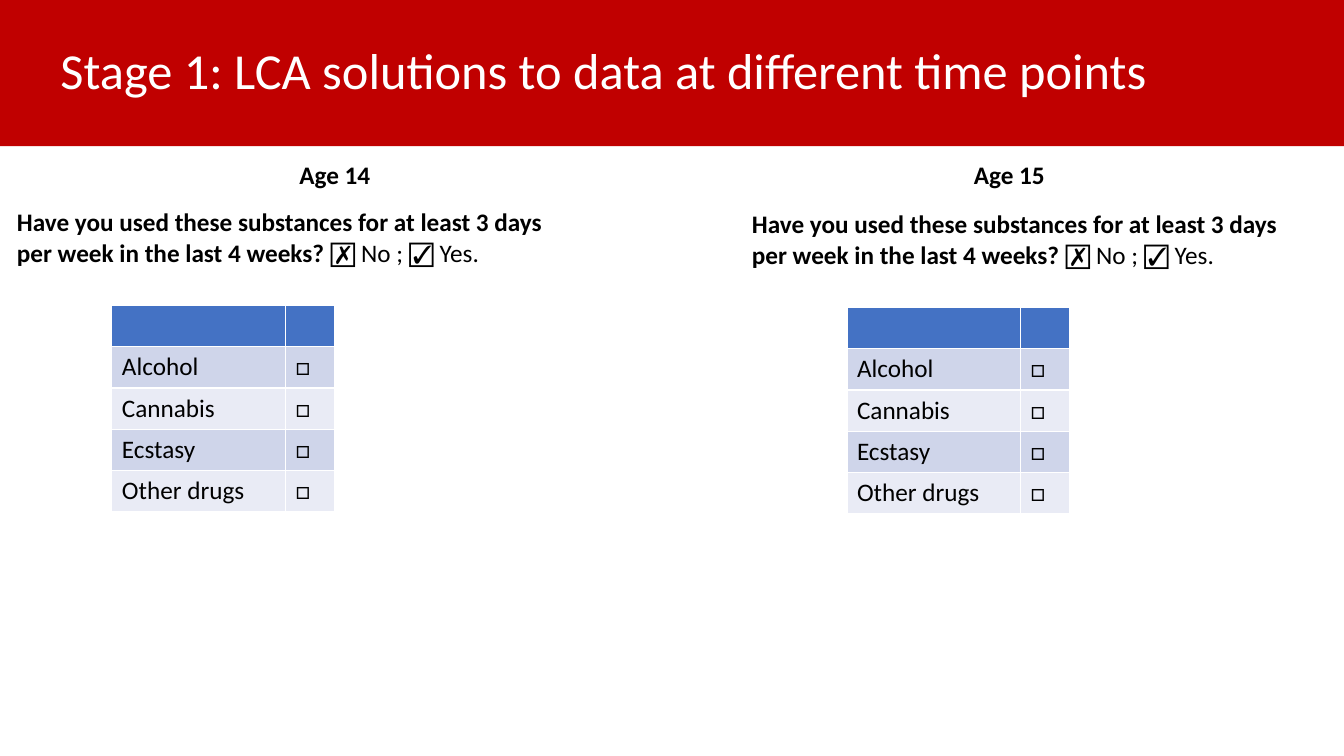
import pptx
import pptx.util
import pptx.dml.color
import pptx.enum.text

Inches = pptx.util.Inches
RGBColor = pptx.dml.color.RGBColor

RED = RGBColor(0xC0, 0x00, 0x00)
WHITE = RGBColor(0xFF, 0xFF, 0xFF)
BLACK = RGBColor(0x00, 0x00, 0x00)
HEADER_BLUE = RGBColor(0x44, 0x72, 0xC4)
BANDS = [RGBColor(0xCF, 0xD5, 0xEA), RGBColor(0xE9, 0xEB, 0xF5)]

SUBSTANCES = ["Alcohol", "Cannabis", "Ecstasy", "Other drugs"]
QUESTION = "Have you used these substances for at least 3 days per week in the last 4 weeks? "
ANSWERS = "☒ No ; ☑ Yes."
COL_WIDTHS = [1.72, 0.49]
ROW_HEIGHT = 0.41


def add_run(p, text, size=18, bold=False, color=BLACK):
    r = p.add_run()
    r.text = text
    r.font.color.rgb = color
    fmt = {"name": "Calibri", "size": pptx.util.Pt(size), "bold": bold}
    for key, value in fmt.items():
        setattr(r.font, key, value)


def add_text(slide, left, top, width, height, wrap, runs):
    sp = slide.shapes.add_textbox(Inches(left), Inches(top), Inches(width), Inches(height))
    tf = sp.text_frame
    tf.word_wrap = wrap
    for text, bold in runs:
        add_run(tf.paragraphs[0], text, bold=bold)


def add_title(slide, left, top, width, height):
    sp = slide.shapes.title
    box = {"left": left, "top": top, "width": width, "height": height}
    for key, value in box.items():
        setattr(sp, key, Inches(value))
    sp.fill.solid()
    sp.fill.fore_color.rgb = RED
    tf = sp.text_frame
    tf.auto_size = pptx.enum.text.MSO_AUTO_SIZE.NONE
    tf.vertical_anchor = pptx.enum.text.MSO_ANCHOR.MIDDLE
    p = tf.paragraphs[0]
    p.alignment = pptx.enum.text.PP_ALIGN.LEFT
    p.line_spacing = 0.9
    add_run(p, "\t", 24, color=WHITE)
    add_run(p, "Stage 1: LCA solutions to data at different time points", 36, color=WHITE)


def add_checklist(slide, left, top):
    rows = [("", "")] + [(name, "□") for name in SUBSTANCES]
    frame = slide.shapes.add_table(
        len(rows), len(COL_WIDTHS), Inches(left), Inches(top),
        Inches(sum(COL_WIDTHS)), Inches(ROW_HEIGHT * len(rows)))
    table = frame.table
    for col, width in zip(table.columns, COL_WIDTHS):
        col.width = Inches(width)
    for i, row in enumerate(rows):
        table.rows[i].height = Inches(ROW_HEIGHT)
        for j, text in enumerate(row):
            cell = table.cell(i, j)
            cell.fill.solid()
            cell.fill.fore_color.rgb = BANDS[(i - 1) % 2] if i else HEADER_BLUE
            if text:
                add_run(cell.text_frame.paragraphs[0], text)


def add_survey(slide, left, top, age, age_left):
    # Age heading
    add_text(slide, age_left, 1.53, 0.91, 0.4, False, [(age, True)])
    # Substance checklist
    add_checklist(slide, left + 1.04, top + 1.03)
    # Question
    add_text(slide, left, top, 5.6, 1.31, True, [(QUESTION, True), (ANSWERS, False)])


def main():
    prs = pptx.Presentation()
    prs.slide_width = Inches(13.33)
    prs.slide_height = Inches(7.5)
    slide = prs.slides.add_slide(prs.slide_layouts[5])

    # Title band
    add_title(slide, 0, 0, 13.33, 1.45)

    # One survey per age
    add_survey(slide, 0.07, 2.0, "Age 14", 2.87)
    add_survey(slide, 7.36, 2.02, "Age 15", 9.56)

    prs.save("out.pptx")


if __name__ == "__main__":
    main()
